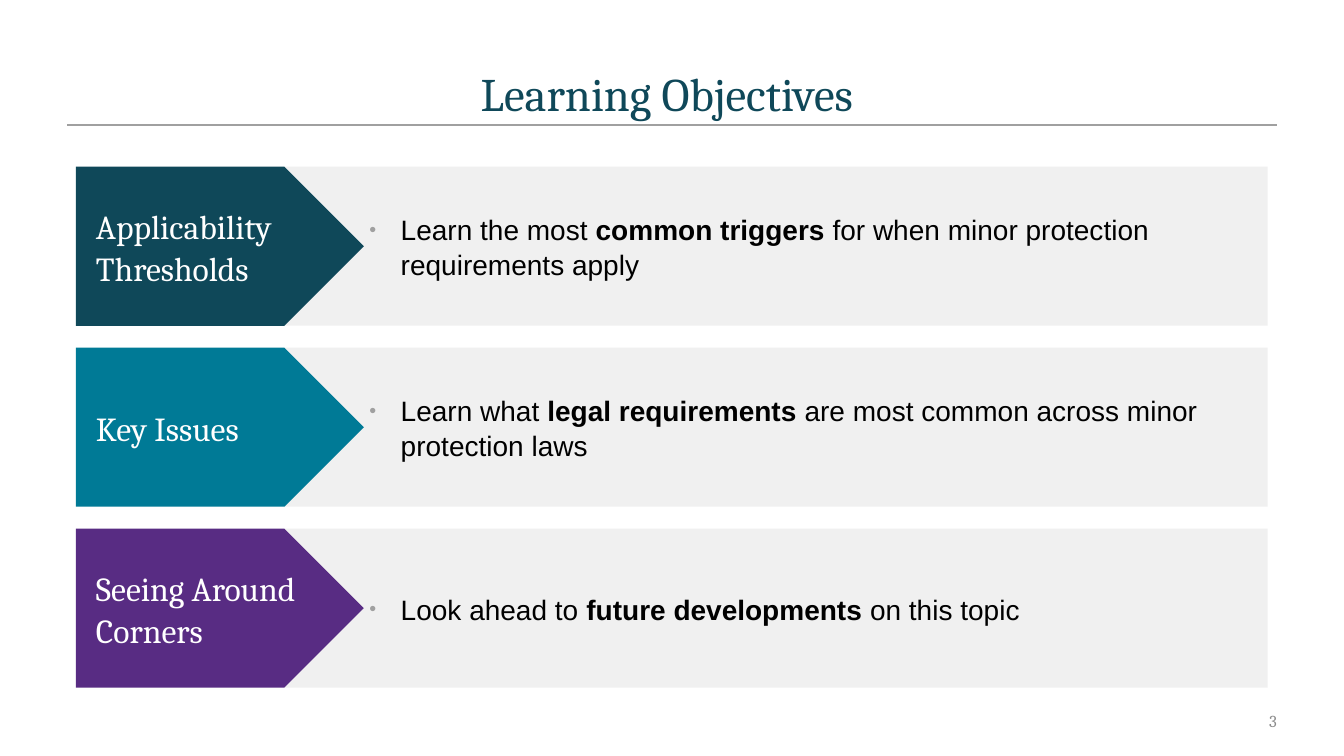
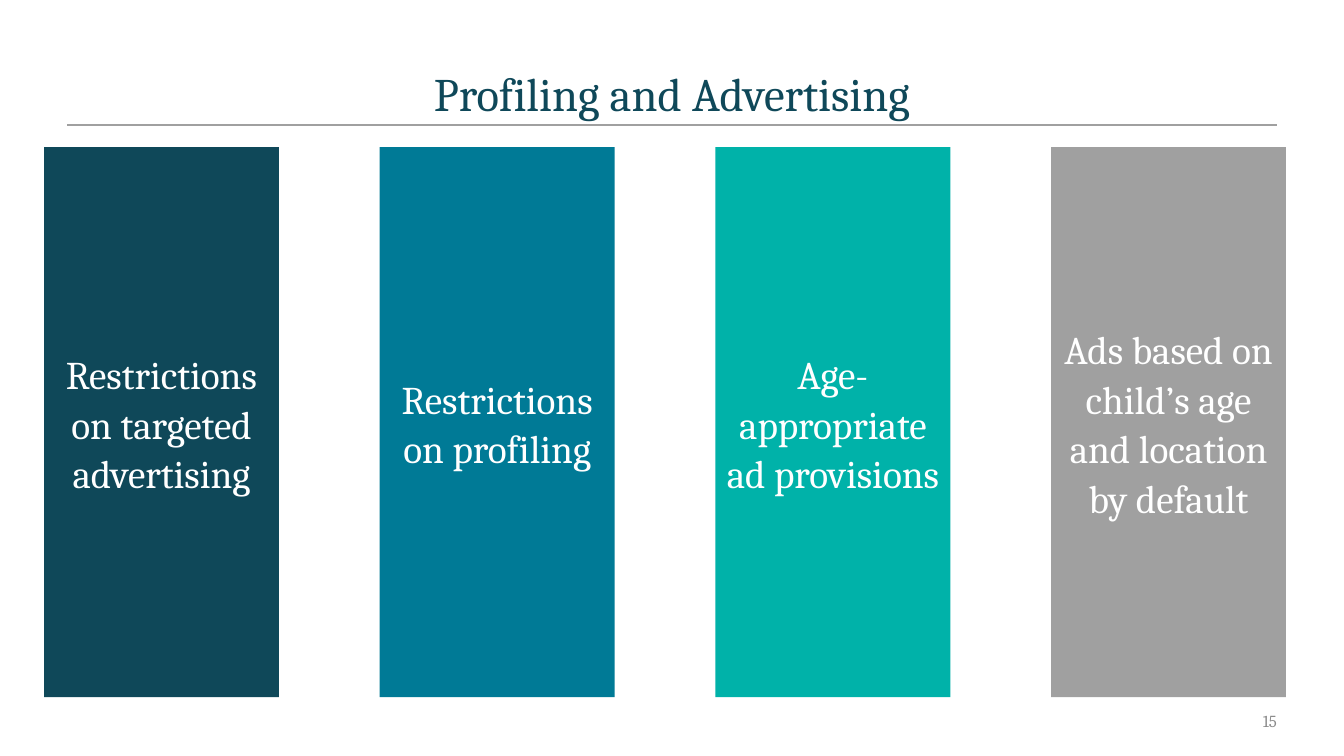
from dataclasses import dataclass

from lxml import etree
from pptx import Presentation
from pptx.dml.color import RGBColor
from pptx.enum.shapes import MSO_CONNECTOR, MSO_SHAPE
from pptx.enum.text import MSO_ANCHOR, PP_ALIGN
from pptx.oxml.ns import qn
from pptx.shapes.autoshape import Shape
from pptx.slide import Slide
from pptx.util import Cm, Pt

RECTANGLE, PENTAGON = MSO_SHAPE.RECTANGLE, MSO_SHAPE.PENTAGON
STRAIGHT = MSO_CONNECTOR.STRAIGHT
LEFT, CENTER, RIGHT = PP_ALIGN.LEFT, PP_ALIGN.CENTER, PP_ALIGN.RIGHT
MIDDLE, BOTTOM = MSO_ANCHOR.MIDDLE, MSO_ANCHOR.BOTTOM

# Shared look
NAVY, TEAL, TURQUOISE, PURPLE = "0F4859", "007A96", "00B2A9", "582C83"
GRAY, PALE_GRAY, NUMBER_GRAY = "A0A0A0", "F0F0F0", "8C8C8C"
WHITE, BLACK = "FFFFFF", "000000"
SERIF, SANS = "Cambria", "Arial"
TITLE_ONLY = 5
MARGIN, CONTENT_WIDTH = 1.7, 30.48
LINE_SPACING = 1.05


@dataclass(frozen=True)
class Box:
    """Position and size in centimetres."""
    left: float
    top: float
    width: float
    height: float

    def lengths(self) -> tuple[Cm, Cm, Cm, Cm]:
        return Cm(self.left), Cm(self.top), Cm(self.width), Cm(self.height)


@dataclass(frozen=True)
class Objective:
    label: str
    color: str
    before: str
    emphasis: str
    after: str


@dataclass(frozen=True)
class Topic:
    text: str
    color: str


OBJECTIVES = [
    Objective("Applicability Thresholds", NAVY, "Learn the most ", "common triggers ",
              "for when minor protection requirements apply"),
    Objective("Key Issues", TEAL, "Learn what ", "legal requirements ",
              "are most common across minor protection laws"),
    Objective("Seeing Around Corners", PURPLE, "Look ahead to ", "future developments ",
              "on this topic"),
]
TOPICS = [
    Topic("Restrictions on targeted advertising", NAVY),
    Topic("Restrictions on profiling", TEAL),
    Topic("Age-appropriate ad provisions", TURQUOISE),
    Topic("Ads based on child’s age and location by default", GRAY),
]


def rgb(color: str) -> RGBColor:
    return RGBColor.from_string(color)


def set_frame(shape: Shape, left: float = 0.25, right: float = 0.25, anchor=MIDDLE) -> None:
    frame = shape.text_frame
    frame.word_wrap = True
    frame.vertical_anchor = anchor
    frame.margin_left, frame.margin_right = Cm(left), Cm(right)
    frame.margin_top = frame.margin_bottom = Cm(0.13)


def style_text(shape: Shape, font: str, size: float, color: str, align,
               spacing: float = 1.0) -> None:
    paragraph = shape.text_frame.paragraphs[0]
    paragraph.alignment = align
    paragraph.line_spacing = spacing
    for run in paragraph.runs:
        run.font.name, run.font.size = font, Pt(size)
        run.font.color.rgb = rgb(color)


def add_block(shapes, preset, box: Box, color: str) -> Shape:
    block = shapes.add_shape(preset, *box.lengths())
    block.shadow.inherit = False
    block.fill.solid()
    block.fill.fore_color.rgb = rgb(color)
    block.line.fill.background()
    return block


def add_bullet(paragraph, indent: float, hanging: float) -> None:
    properties = paragraph._p.get_or_add_pPr()
    properties.set("marL", str(Cm(indent)))
    properties.set("indent", str(-Cm(hanging)))
    bullet_color = etree.SubElement(properties, qn("a:buClr"))
    etree.SubElement(bullet_color, qn("a:srgbClr"), val=GRAY)
    etree.SubElement(properties, qn("a:buSzPct"), val="70000")
    etree.SubElement(properties, qn("a:buFont"), typeface=SANS)
    etree.SubElement(properties, qn("a:buChar"), char="•")


def add_base_slide(deck, heading: str, number: int) -> Slide:
    """Add a slide with its title, rule and page number."""
    slide = deck.slides.add_slide(deck.slide_layouts[TITLE_ONLY])
    title = slide.shapes.title
    title.left, title.top, title.width, title.height = Box(
        MARGIN, 1.47, CONTENT_WIDTH, 1.7).lengths()
    title.text_frame.text = heading
    set_frame(title, anchor=BOTTOM)
    style_text(title, SERIF, 33.3, NAVY, CENTER)

    rule = slide.shapes.add_connector(
        STRAIGHT, Cm(MARGIN), Cm(3.15), Cm(MARGIN + CONTENT_WIDTH), Cm(3.15))
    rule.line.color.rgb = rgb(GRAY)
    rule.line.width = Pt(1)
    etree.SubElement(rule._element.spPr, qn("a:effectLst"))

    page_number = slide.shapes.add_textbox(*Box(24.56, 17.65, 7.62, 1.02).lengths())
    page_number.text_frame.text = str(number)
    set_frame(page_number, right=0)
    style_text(page_number, SERIF, 12, NUMBER_GRAY, RIGHT)
    return slide


def add_objective(slide: Slide, objective: Objective, top: float) -> None:
    height = 4.01
    row = slide.shapes.add_group_shape().shapes

    # Description bar
    bar = add_block(row, RECTANGLE, Box(7.16, top, 24.79, height), PALE_GRAY)
    set_frame(bar, left=1.52, right=1.02)
    sentence = bar.text_frame.paragraphs[0]
    for part in (objective.before, objective.emphasis, objective.after):
        run = sentence.add_run()
        run.text = part
        run.font.bold = part == objective.emphasis
    style_text(bar, SANS, 20, BLACK, LEFT, LINE_SPACING)
    add_bullet(sentence, indent=1.42, hanging=0.79)

    # Arrow label
    label = add_block(row, PENTAGON, Box(1.91, top, 7.26, height), objective.color)
    label.text_frame.text = objective.label
    set_frame(label, left=0.51)
    style_text(label, SERIF, 24, WHITE, LEFT, LINE_SPACING)


def add_topic(slide: Slide, topic: Topic, left: float) -> None:
    column = add_block(slide.shapes, RECTANGLE, Box(left, 3.71, 5.92, 13.86), topic.color)
    column.text_frame.text = topic.text
    set_frame(column)
    style_text(column, SERIF, 28, WHITE, CENTER, LINE_SPACING)


def main() -> None:
    deck = Presentation()
    deck.slide_width, deck.slide_height = Cm(33.87), Cm(19.05)

    # Learning objectives: three rows
    objectives_slide = add_base_slide(deck, "Learning Objectives ", 3)
    for index, objective in enumerate(OBJECTIVES):
        add_objective(objectives_slide, objective, top=4.2 + index * 4.56)

    # Profiling and advertising: four columns
    advertising_slide = add_base_slide(deck, "Profiling and Advertising", 15)
    for index, topic in enumerate(TOPICS):
        add_topic(advertising_slide, topic, left=1.11 + index * 8.46)

    deck.save("out.pptx")


if __name__ == "__main__":
    main()
